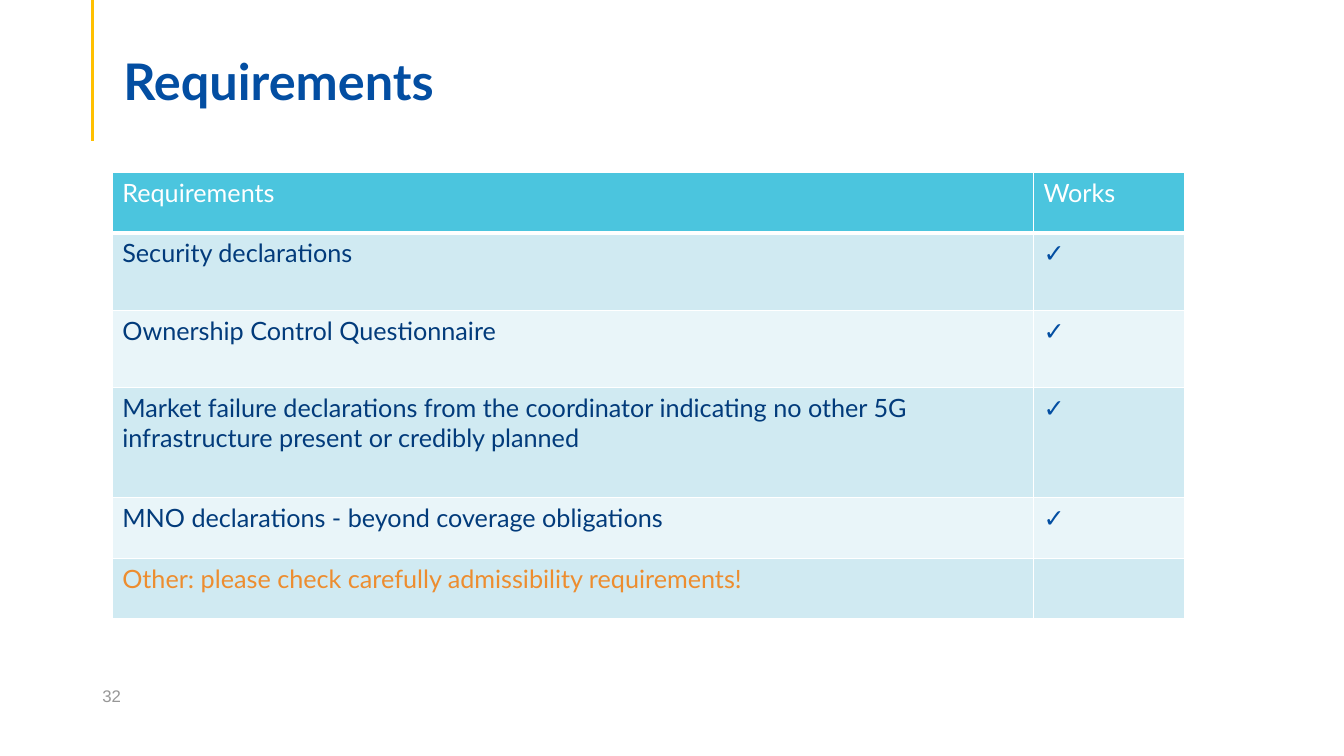
"""Build the requirements checklist slide."""
from typing import NamedTuple

from lxml import etree
from pptx import Presentation
from pptx import util as u
from pptx.dml.color import RGBColor
from pptx.enum import shapes, text
from pptx.oxml import ns

Pt = u.Pt
WHITE, BLUE, NAVY, ORANGE = "FFFFFF", "034EA2", "023B7B", "ED8D2F"
GREY, YELLOW = "979797", "FFC000"
HEADER, BAND_DARK, BAND_LIGHT = "4BC5DE", "D0EAF2", "E9F5F9"
COLUMN_WIDTHS = (658, 108)
ACCENT_X = 66.2


class Label(NamedTuple):
    text: str
    box: tuple[float, float, float, float]
    anchor: text.MSO_ANCHOR
    font: str
    size: float
    color: str
    bold: bool = False
    bottom: float = 3.6
    spacing: float = 1.0


class Row(NamedTuple):
    requirement: str
    works: str
    height: float
    color: str = NAVY
    checked: bool = False


LABELS = (
    Label("Requirements", (81, 17.5, 828, 62), text.MSO_ANCHOR.BOTTOM,
          "Lato", 36, BLUE, True, 0, 0.9),
    Label("32", (66, 482.6, 216, 28.8), text.MSO_ANCHOR.MIDDLE,
          "Arial", 12, GREY),
)
ROWS = (
    Row("Requirements", "Works", 43.2, WHITE),
    Row("Security declarations", "", 55.2, checked=True),
    Row("Ownership Control Questionnaire", "", 55.2, checked=True),
    Row("Market failure declarations from the coordinator indicating no other "
        "5G infrastructure present or credibly planned", "", 78.6,
        checked=True),
    Row("MNO declarations - beyond coverage obligations", "", 43.4,
        checked=True),
    Row("Other: please check carefully admissibility requirements!", "", 43.2,
        ORANGE),
)


def rgb(color: str) -> RGBColor:
    return RGBColor.from_string(color)


def format_text(p, font: str, size: float, color: str, bold: bool) -> None:
    p.font.size = Pt(size)
    for r in p.runs:
        r.font.name = font
        r.font.size = Pt(size)
        r.font.bold = bold
        r.font.color.rgb = rgb(color)


def add_label(s, label: Label) -> None:
    sp = s.shapes.add_textbox(*map(Pt, label.box))
    tf = sp.text_frame
    tf.word_wrap = True
    tf.vertical_anchor = label.anchor
    tf.margin_bottom = Pt(label.bottom)
    tf.text = label.text
    p = tf.paragraphs[0]
    p.line_spacing = label.spacing
    format_text(p, label.font, label.size, label.color, label.bold)


def add_accent(s) -> None:
    line = s.shapes.add_connector(shapes.MSO_CONNECTOR.STRAIGHT, Pt(ACCENT_X),
                                  Pt(0), Pt(ACCENT_X), Pt(100.8))
    line.line.color.rgb = rgb(YELLOW)
    line.line.width = Pt(2.25)
    etree.SubElement(line._element.spPr, ns.qn("a:effectLst"))


def add_border(cell, side: str, width: float) -> None:
    tc_pr = cell._tc.get_or_add_tcPr()
    ln = etree.SubElement(tc_pr, ns.qn(f"a:ln{side}"), w=str(Pt(width)))
    fill = etree.SubElement(ln, ns.qn("a:solidFill"))
    etree.SubElement(fill, ns.qn("a:srgbClr"), val=WHITE)


def add_check_bullet(p) -> None:
    p_pr = p._p.get_or_add_pPr()
    p_pr.set("marL", str(Pt(22.5)))
    p_pr.set("indent", str(-Pt(22.5)))
    bullet_color = etree.SubElement(p_pr, ns.qn("a:buClr"))
    etree.SubElement(bullet_color, ns.qn("a:srgbClr"), val=BLUE)
    etree.SubElement(p_pr, ns.qn("a:buFont"), typeface="Lato")
    etree.SubElement(p_pr, ns.qn("a:buChar"), char="✓")


def fill_cell(cell, value: str, color: str, background: str,
              checked: bool = False) -> None:
    for side in "LRTB":
        add_border(cell, side, 3 if side == "B" and background == HEADER else 1)
    cell.fill.solid()
    cell.fill.fore_color.rgb = rgb(background)
    cell.text_frame.text = " " if checked else value
    p = cell.text_frame.paragraphs[0]
    if checked:
        add_check_bullet(p)
    format_text(p, "Lato", 18, color, False)


def add_requirements(s) -> None:
    frame = s.shapes.add_table(
        len(ROWS), len(COLUMN_WIDTHS), Pt(80.2), Pt(123.2),
        Pt(sum(COLUMN_WIDTHS)), Pt(sum(row.height for row in ROWS)))
    table = frame.table
    for column, width in zip(table.columns, COLUMN_WIDTHS):
        column.width = Pt(width)
    for i, row in enumerate(ROWS):
        table.rows[i].height = Pt(row.height)
        band = BAND_DARK if i % 2 else BAND_LIGHT
        background = band if i else HEADER
        fill_cell(table.cell(i, 0), row.requirement, row.color, background)
        fill_cell(table.cell(i, 1), row.works, row.color, background,
                  row.checked)


def main() -> None:
    prs = Presentation()
    prs.slide_width, prs.slide_height = Pt(960), Pt(540)
    s = prs.slides.add_slide(prs.slide_layouts[6])
    add_accent(s)
    add_requirements(s)
    for label in LABELS:
        add_label(s, label)
    prs.save("out.pptx")


if __name__ == "__main__":
    main()
